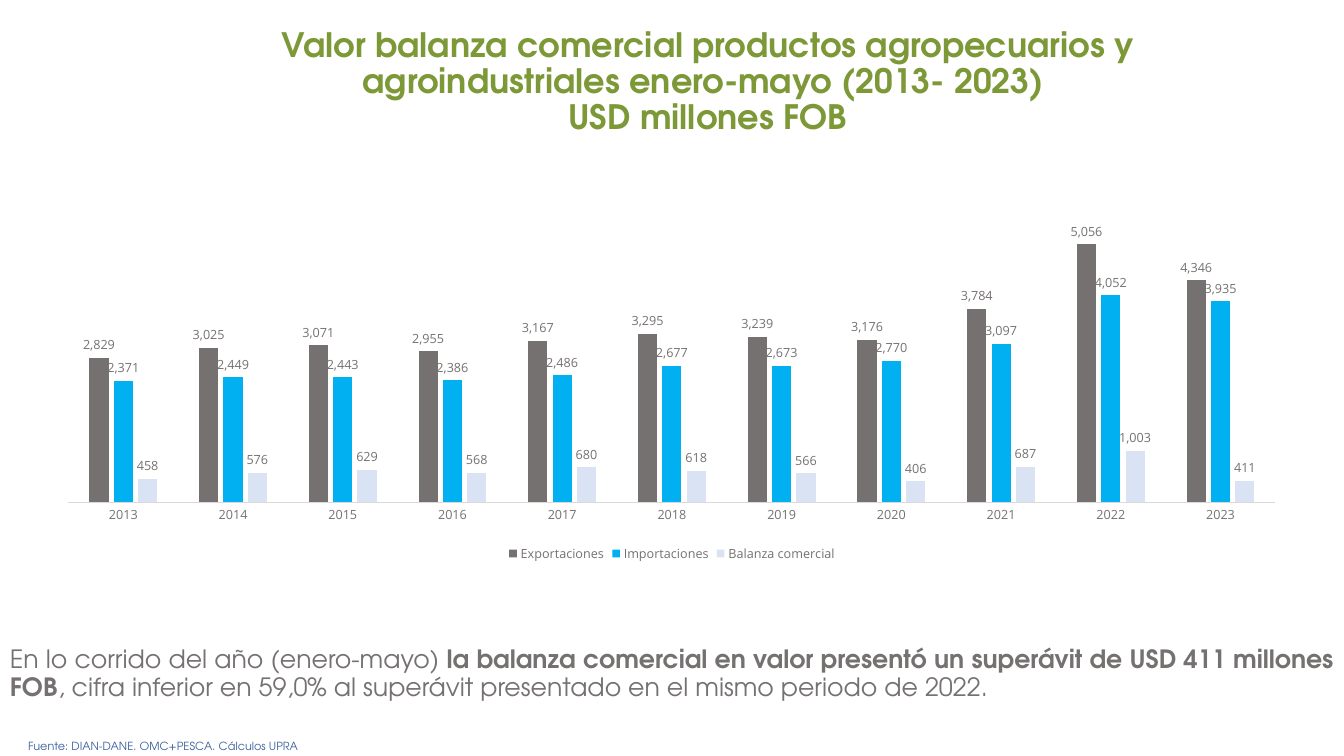
from lxml.etree import SubElement
from pptx import Presentation
from pptx.chart.data import CategoryChartData
from pptx.dml.color import RGBColor
from pptx.enum.chart import XL_CHART_TYPE, XL_LABEL_POSITION, XL_LEGEND_POSITION, XL_TICK_MARK
from pptx.enum.text import PP_ALIGN
from pptx.oxml.ns import qn
from pptx.util import Inches, Pt

GRAY, GREEN, BLUE = "767171", "7D9837", "395F9B"
FORMAT = '_-* #,##0_-;\\-* #,##0_-;_-* "-"??_-;_-@_'
YEARS = [str(year) for year in range(2013, 2024)]
TRADE = [
    ("Exportaciones", GRAY, [2829, 3025, 3071, 2955, 3167, 3295, 3239, 3176, 3784, 5056, 4346]),
    ("Importaciones", "00B0F0", [2371, 2449, 2443, 2386, 2486, 2677, 2673, 2770, 3097, 4052, 3935]),
    ("Balanza comercial", "DAE3F3", [458, 576, 629, 568, 680, 618, 566, 406, 687, 1003, 411]),
]


def color(code):
    return RGBColor.from_string(code)


class Board:
    text_font = "TeX Gyre Adventor"
    chart_font = "Open Sans"

    def __init__(self, slide):
        self.slide = slide

    def style(self, font, name, size, code, bold=False):
        font.name = name
        font.size = Pt(size)
        font.bold = bold
        font.color.rgb = color(code)

    def text(self, area, parts, size, code, align, spacing=1.0):
        frame = self.slide.shapes.add_textbox(*map(Inches, area)).text_frame
        frame.word_wrap = True
        line = frame.paragraphs[0]
        line.alignment = align
        line.line_spacing = spacing
        for words, bold in parts:
            run = line.add_run()
            run.text = words
            self.style(run.font, self.text_font, size, code, bold)
        return line

    def bars(self, area, years, trade, plot_box):
        data = CategoryChartData(number_format=FORMAT)
        data.categories = years
        for name, _, values in trade:
            data.add_series(name, values)
        chart = self.slide.shapes.add_chart(
            XL_CHART_TYPE.COLUMN_CLUSTERED, *map(Inches, area), data).chart
        self.style(chart.font, self.chart_font, 10, BLUE)
        chart.has_title = False
        self.place(chart, plot_box)
        self.axes(chart)
        chart.has_legend = True
        chart.legend.position = XL_LEGEND_POSITION.BOTTOM
        chart.legend.include_in_layout = False
        self.style(chart.legend.font, self.chart_font, 9, GRAY)
        plot = chart.plots[0]
        plot.gap_width = 219
        plot.overlap = -27
        plot.vary_by_categories = False
        for series, (_, code, _) in zip(plot.series, trade):
            series.invert_if_negative = False
            series.format.fill.solid()
            series.format.fill.fore_color.rgb = color(code)
            labels = series.data_labels
            labels.show_value = True
            labels.position = XL_LABEL_POSITION.OUTSIDE_END
            labels.number_format = FORMAT
            labels.number_format_is_linked = False
            self.style(labels.font, self.chart_font, 9, GRAY)

    def axes(self, chart):
        years = chart.category_axis
        years.major_tick_mark = years.minor_tick_mark = XL_TICK_MARK.NONE
        years.has_major_gridlines = False
        years.format.line.color.rgb = color("D9D9D9")
        years.format.line.width = Pt(0.75)
        self.style(years.tick_labels.font, self.chart_font, 9, GRAY)
        values = chart.value_axis
        values.has_major_gridlines = False
        values.minimum_scale = 0
        values.maximum_scale = 6000
        values.tick_labels.number_format = FORMAT
        values.tick_labels.number_format_is_linked = False
        values.visible = False

    def place(self, chart, plot_box):
        area = chart._chartSpace.find(".//" + qn("c:plotArea"))
        for old in area.findall(qn("c:layout")):
            area.remove(old)
        layout = SubElement(area, qn("c:layout"))
        area.insert(0, layout)
        manual = SubElement(layout, qn("c:manualLayout"))
        rules = [("layoutTarget", "inner"), ("xMode", "edge"), ("yMode", "edge")]
        for tag, value in rules + list(zip("xywh", plot_box)):
            SubElement(manual, qn("c:" + tag)).set("val", str(value))


def main():
    deck = Presentation()
    deck.slide_width = Inches(13.33)
    deck.slide_height = Inches(7.5)
    board = Board(deck.slides.add_slide(deck.slide_layouts[6]))
    board.text((0.18, 7.29, 12.91, 0.24),
               [("Fuente: DIAN-DANE. OMC+PESCA. Cálculos UPRA", False)],
               8, BLUE, PP_ALIGN.JUSTIFY)
    board.text((0, 6.37, 13.33, 0.93), [
        ("En lo corrido del año (enero-mayo) ", False),
        ("la balanza comercial en valor presentó un superávit de USD 411 millones FOB", True),
        (", cifra inferior en 59,0% al superávit presentado en el mismo periodo de 2022.", False),
    ], 18, GRAY, PP_ALIGN.JUSTIFY, 0.9)
    board.bars((0.43, 1.87, 12.47, 3.75), YEARS, TRADE, (0.02, 0.02, 0.96, 0.81))
    title = board.text((2.44, 0.23, 9.16, 1.07), [
        ("Valor balanza comercial productos agropecuarios y "
         "agroindustriales enero-mayo (2013- 2023) ", True),
    ], 24, GREEN, PP_ALIGN.CENTER, 0.9)
    title.add_line_break()
    last = title.add_run()
    last.text = "USD millones FOB"
    board.style(last.font, board.text_font, 24, GREEN, True)
    deck.save("out.pptx")


if __name__ == "__main__":
    main()
